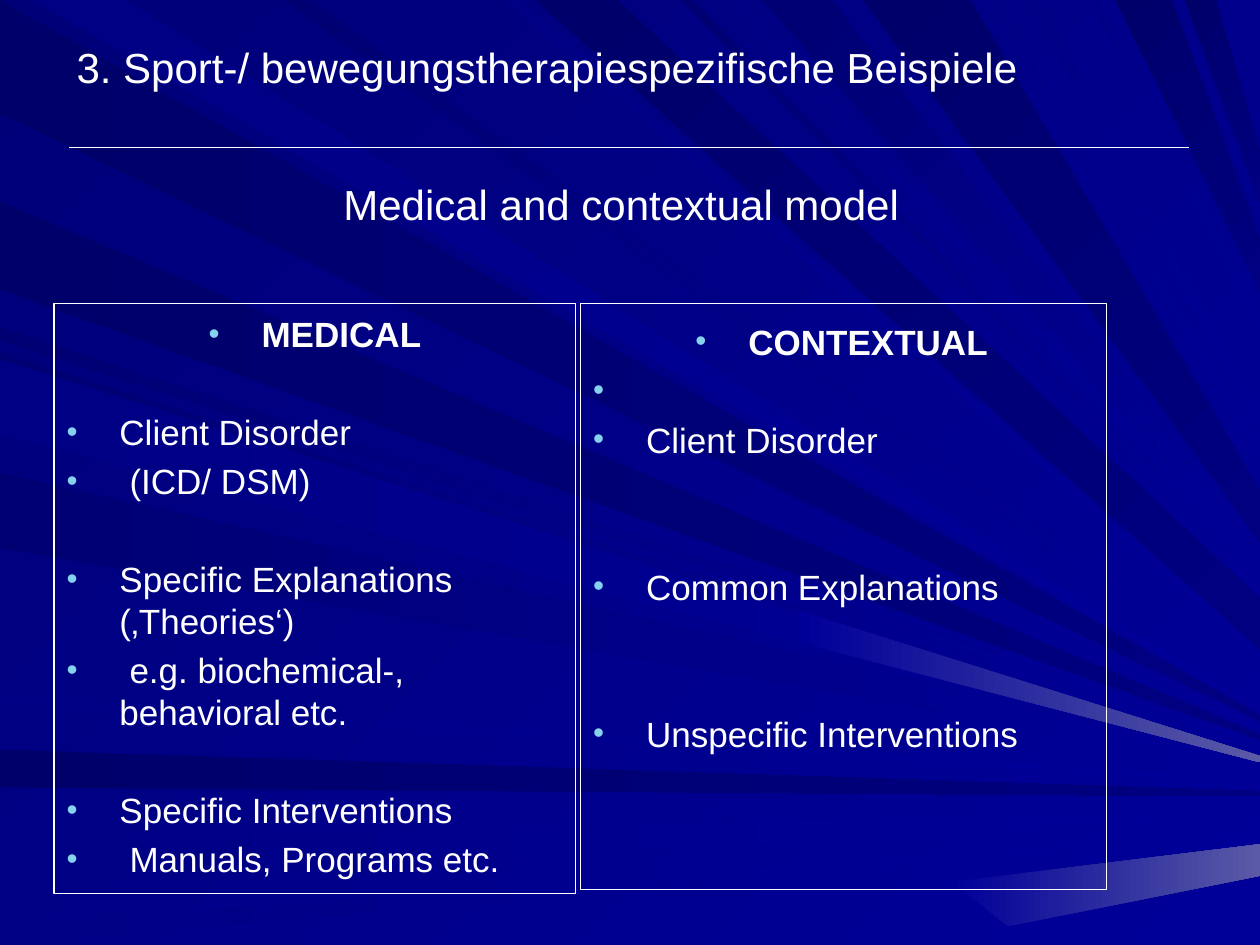
from dataclasses import dataclass

from lxml.etree import SubElement
from pptx import Presentation
from pptx.dml.color import RGBColor as RGB
from pptx.enum.shapes import MSO_CONNECTOR as CONNECTOR
from pptx.enum.shapes import MSO_SHAPE as SHAPE
from pptx.enum.text import MSO_ANCHOR as ANCHOR
from pptx.enum.text import PP_ALIGN as ALIGN
from pptx.oxml.ns import qn
from pptx.util import Inches, Pt


@dataclass(frozen=True)
class Theme:
    font: str = "Arial"
    text: str = "FFFFFF"
    bullet: str = "86D1EC"
    back: tuple = ("000078", "000099")
    deep: tuple = ("00006B", "000080")
    dim: tuple = ("000073", "000099")
    soft: tuple = ("000085", "000099")
    glow: tuple = ("000099", "5A5AA6")
    title_size: int = 24
    body_size: int = 20
    line_pitch: int = 24
    paragraph_gap: int = 4


THEME = Theme()
WIDTH, HEIGHT = 10, 7.5
INDENT = 0.42

# Rays run to the right edge: both ends of the base, then the height reached
LEFT_RAYS = [
    (THEME.deep, [(0, 0.9, 5.7), (1.6, 2.3, 5.85), (5.95, 6.25, 6.3)]),
    (THEME.dim, [(2.6, 2.7, 5.9), (2.8, 3.4, 6), (3.75, 4.35, 6.05)]),
    (THEME.soft, [(2.85, 3.45, 6.05), (5.5, 5.6, 6.2), (6.65, 7.05, 6.45), (7.35, 7.5, 6.6)]),
]
TOP_RAYS = [
    (THEME.deep, 0.4, [(4.25, 4.9, 4.95), (6.85, 7.7, 4.1), (8.85, 9.3, 2.1), (9.4, 9.65, 1.4)]),
    (THEME.dim, 0.02, [(2.25, 2.45, 5.5), (5.4, 5.5, 4.65), (6.05, 6.6, 4.45)]),
    (THEME.soft, 0.02, [(0.25, 1, 5.65), (4, 4.15, 5.2), (5.75, 5.9, 4.55),
                        (7.85, 7.9, 3.6), (8.15, 8.25, 3.35), (8.65, 8.7, 2.55)]),
]
GLOWS = [
    [(6.35, 4.85), (WIDTH, 6), (WIDTH, 6.05), (6.35, 5.1)],
    [(7.55, 7), (WIDTH, 6.7), (WIDTH, 6.95), (8, 7.35)],
]

# Model columns: heading, then (text, number of free lines above it)
MEDICAL = ("MEDICAL", [
    ("Client Disorder", 1),
    ("\t(ICD/ DSM)", 0),
    ("Specific Explanations (‚Theories‘)", 1),
    ("\te.g. biochemical-, behavioral etc.", 0),
    ("Specific Interventions", 1),
    ("\tManuals, Programs etc.", 0),
])
CONTEXTUAL = ("CONTEXTUAL", [
    ("\t\t", 0),
    ("Client Disorder", 0),
    ("Common Explanations", 2),
    ("Unspecific Interventions", 2),
])


def apply_gradient(fill, angle, tones):
    fill.gradient()
    fill.gradient_angle = -angle % 360
    for stop, tone in zip(fill.gradient_stops, tones):
        stop.color.rgb = RGB.from_string(tone)


def add_ray(slide, corners, tones, angle):
    first, *others = [(Inches(x), Inches(y)) for x, y in corners]
    outline = slide.shapes.build_freeform(*first, scale=1.0)
    outline.add_line_segments(others, close=True)
    ray = outline.convert_to_shape()
    ray.shadow.inherit = False
    ray.line.fill.background()
    apply_gradient(ray.fill, angle, tones)


def add_fan(slide):
    for tones, rays in LEFT_RAYS:
        for upper, lower, reach in rays:
            tip = [(WIDTH, reach + 0.02), (WIDTH, reach - 0.02)]
            add_ray(slide, [(0, upper), (0, lower), *tip], tones, 0)
    for tones, spread, rays in TOP_RAYS:
        for left, right, reach in rays:
            tip = [(WIDTH, reach - spread / 2), (WIDTH, reach + spread / 2)]
            add_ray(slide, [(left, 0), (right, 0), *tip], tones, 45)
    for corners in GLOWS:
        add_ray(slide, corners, THEME.glow, 0)


def add_rule(slide, left, right, y):
    rule = slide.shapes.add_connector(
        CONNECTOR.STRAIGHT, Inches(left), Inches(y), Inches(right), Inches(y))
    rule.line.color.rgb = RGB.from_string(THEME.text)
    rule.line.width = Pt(0.5)
    SubElement(rule._element.spPr, qn("a:effectLst"))


def add_frame(slide, left, top, width, height):
    frame = slide.shapes.add_shape(
        SHAPE.RECTANGLE, Inches(left), Inches(top), Inches(width), Inches(height))
    frame.shadow.inherit = False
    frame.fill.background()
    frame.line.color.rgb = RGB.from_string(THEME.text)
    frame.line.width = Pt(0.75)
    return frame


def add_text_box(slide, left, top, width, height):
    box = slide.shapes.add_textbox(
        Inches(left), Inches(top), Inches(width), Inches(height))
    box.text_frame.word_wrap = True
    return box


def add_run(paragraph, text, size, bold=False):
    run = paragraph.add_run()
    run.text = text
    run.font.name = THEME.font
    run.font.size = Pt(size)
    run.font.bold = bold
    run.font.color.rgb = RGB.from_string(THEME.text)


def add_bullet(paragraph):
    props = paragraph._p.get_or_add_pPr()
    props.set("marL", str(Inches(INDENT)))
    props.set("indent", str(-Inches(INDENT)))
    colour = SubElement(props, qn("a:buClr"))
    SubElement(colour, qn("a:srgbClr"), val=THEME.bullet)
    SubElement(props, qn("a:buSzPct"), val="90000")
    SubElement(props, qn("a:buFont"), typeface=THEME.font)
    SubElement(props, qn("a:buChar"), char="•")


def fill_model(shape, heading, items):
    body = shape.text_frame
    body.word_wrap = True
    body.vertical_anchor = ANCHOR.TOP
    body.margin_top = Inches(0.07)
    title = body.paragraphs[0]
    add_bullet(title)
    title.alignment = ALIGN.CENTER
    title.line_spacing = Pt(THEME.line_pitch)
    add_run(title, heading, THEME.body_size, bold=True)
    row = THEME.line_pitch + THEME.paragraph_gap
    for text, free_lines in items:
        item = body.add_paragraph()
        add_bullet(item)
        item.alignment = ALIGN.LEFT
        item.line_spacing = Pt(THEME.line_pitch)
        item.space_before = Pt(THEME.paragraph_gap + free_lines * row)
        add_run(item, text, THEME.body_size)


def main():
    deck = Presentation()
    deck.slide_width, deck.slide_height = Inches(WIDTH), Inches(HEIGHT)
    slide = deck.slides.add_slide(deck.slide_layouts[6])

    # Background with rays and rule
    apply_gradient(slide.background.fill, 45, THEME.back)
    add_fan(slide)
    add_rule(slide, 0.55, 9.44, 1.17)

    # Slide title
    title = add_text_box(slide, 0.43, 0.99, 9, 1.25).text_frame
    title.vertical_anchor = ANCHOR.MIDDLE
    title.paragraphs[0].alignment = ALIGN.CENTER
    add_run(title.paragraphs[0], "Medical and contextual model", THEME.title_size)

    # The two models side by side
    fill_model(add_frame(slide, 0.43, 2.41, 4.14, 4.68), *MEDICAL)
    fill_model(add_text_box(slide, 4.61, 2.47, 4.14, 5.03), *CONTEXTUAL)
    add_frame(slide, 4.61, 2.41, 4.17, 4.65)

    # Chapter heading
    chapter = add_text_box(slide, 0.51, 0.28, 8.5, 1.1).text_frame
    add_run(chapter.paragraphs[0],
            "3. Sport-/ bewegungstherapiespezifische Beispiele", THEME.title_size)

    deck.save("out.pptx")


if __name__ == "__main__":
    main()
